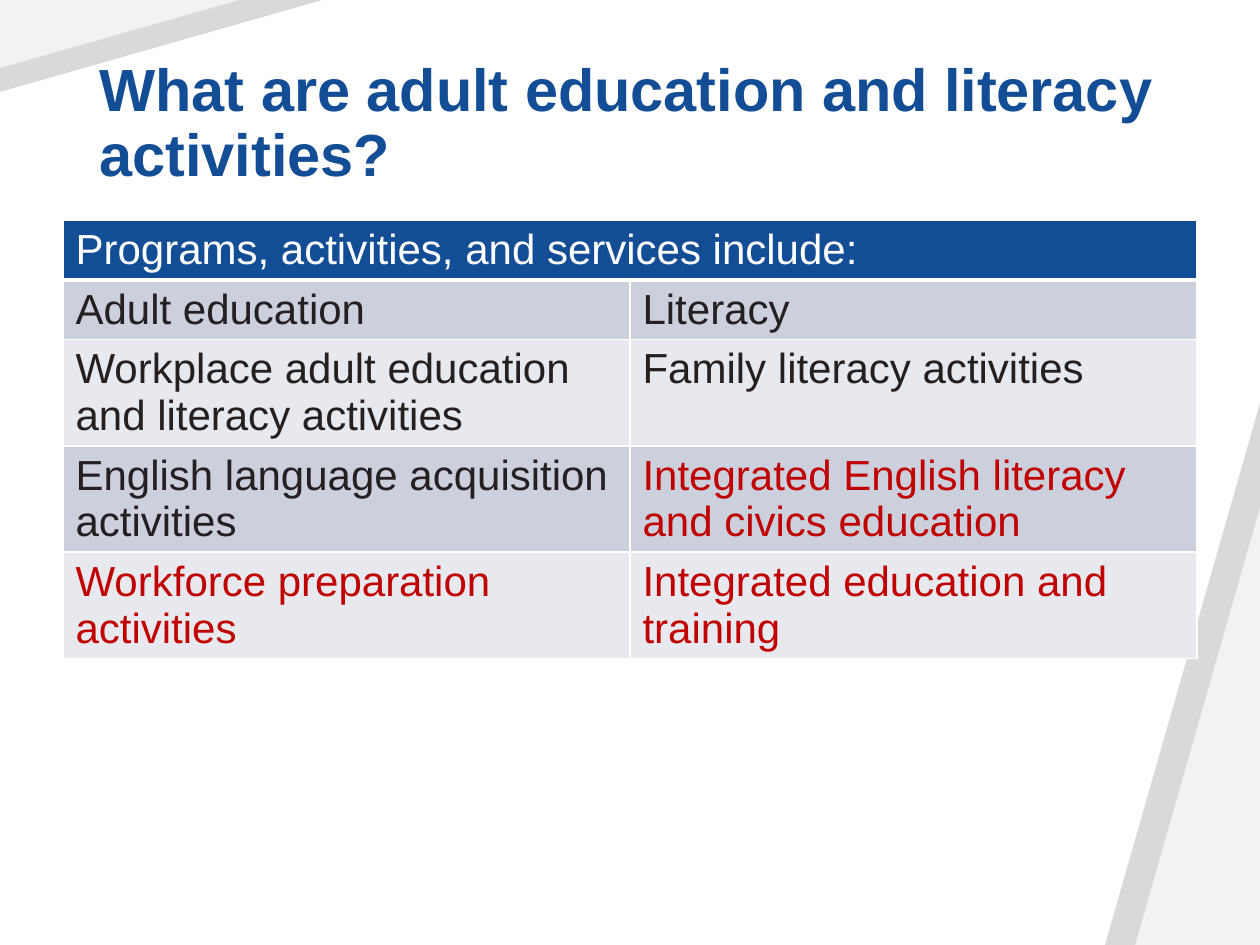
"""Build the slide on adult education and literacy activities."""
from lxml.etree import SubElement
from pptx import Presentation
from pptx.dml.color import RGBColor as Rgb
from pptx.enum.shapes import MSO_SHAPE as Shape
from pptx.enum.text import MSO_ANCHOR as Anchor, PP_ALIGN as Align
from pptx.oxml.ns import qn
from pptx.util import Inches, Pt

BLUE = Rgb(0x12, 0x4D, 0x95)
WHITE = Rgb(0xFF, 0xFF, 0xFF)
INK = Rgb(0x24, 0x20, 0x21)
RED = Rgb(0xC0, 0x00, 0x00)
DARK = Rgb(0xCC, 0xD0, 0xDD)
PALE = Rgb(0xE7, 0xE9, 0xEF)
GREY = Rgb(0xD9, 0xD9, 0xD9)
MIST = Rgb(0xF2, 0xF2, 0xF2)

HEAD = "Programs, activities, and services include:"
ROWS = [
    [("Adult education", INK), ("Literacy", INK)],
    [("Workplace adult education and literacy activities", INK),
     ("Family literacy activities", INK)],
    [("English language acquisition activities", INK),
     ("Integrated English literacy and civics education", RED)],
    [("Workforce preparation activities", RED),
     ("Integrated education and training", RED)],
]


def write(frame, text, size=24, color=INK, bold=False, space=None):
    frame.word_wrap = True
    para = frame.paragraphs[0]
    para.alignment = Align.LEFT
    para.line_spacing = space
    run = para.add_run()
    run.text = text
    font = run.font
    font.name, font.size, font.bold = "Arial", Pt(size), bold
    font.color.rgb = color


def edge(cell, **widths):
    props = cell._tc.get_or_add_tcPr()
    for spot, side in enumerate("LRTB"):
        line = SubElement(props, qn(f"a:ln{side}"), w=str(Pt(widths.get(side, 1))))
        fill = SubElement(line, qn("a:solidFill"))
        SubElement(fill, qn("a:srgbClr"), val=str(WHITE))
        props.remove(line)
        props.insert(spot, line)


class Deck:
    cols, rows = 100, 75
    wide, high = Inches(10), Inches(7.5)

    def __init__(self):
        self.file = Presentation()
        self.file.slide_width, self.file.slide_height = self.wide, self.high
        self.slide = self.file.slides.add_slide(self.file.slide_layouts[5])

    def box(self, x, y, w, h):
        col, row = self.wide / self.cols, self.high / self.rows
        return [round(n) for n in (x * col, y * row, w * col, h * row)]

    def wedge(self, x, y, w, h, color, tip=1, turn=0):
        item = self.slide.shapes.add_shape(
            Shape.ISOSCELES_TRIANGLE, *self.box(x, y, w, h))
        item.adjustments[0] = tip
        item.rotation = turn
        item.shadow.inherit = False
        item.fill.solid()
        item.fill.fore_color.rgb = color
        item.line.fill.background()

    def low(self, w, h, color):
        self.wedge(self.cols - w, self.rows - h, w, h, color)

    def top(self, w, h, color):
        mid = (w - h) / 2
        self.wedge(mid, -mid, h, w, color, tip=0, turn=90)

    def title(self, text, *area):
        item = self.slide.shapes.title
        item.left, item.top, item.width, item.height = self.box(*area)
        item.text_frame.vertical_anchor = Anchor.BOTTOM
        write(item.text_frame, text, size=34, color=BLUE, bold=True, space=0.9)

    def cell(self, cell, text, fill, color, **widths):
        cell.fill.solid()
        cell.fill.fore_color.rgb = fill
        edge(cell, **widths)
        if text:
            write(cell.text_frame, text, color=color)

    def table(self, head, rows, x, y, w, step):
        count = len(rows) + 1
        grid = self.slide.shapes.add_table(
            count, 2, *self.box(x, y, w, step * count)).table
        for col, text in enumerate((head, "")):
            self.cell(grid.cell(0, col), text, BLUE, WHITE, B=3)
        grid.cell(0, 0).merge(grid.cell(0, 1))
        for row, pair in enumerate(rows, 1):
            fill = DARK if row % 2 else PALE
            for col, (text, color) in enumerate(pair):
                self.cell(grid.cell(row, col), text, fill, color)


def main():
    deck = Deck()
    deck.low(12.3, 43, GREY)
    deck.low(9.9, 34.7, MIST)
    deck.top(25.6, 7.3, GREY)
    deck.top(19, 5.4, MIST)
    deck.title("What are adult education and literacy activities?",
               6.9, 4, 87, 11.5)
    deck.table(HEAD, ROWS, 5, 17.5, 90, 4.1)
    deck.file.save("out.pptx")


if __name__ == "__main__":
    main()
